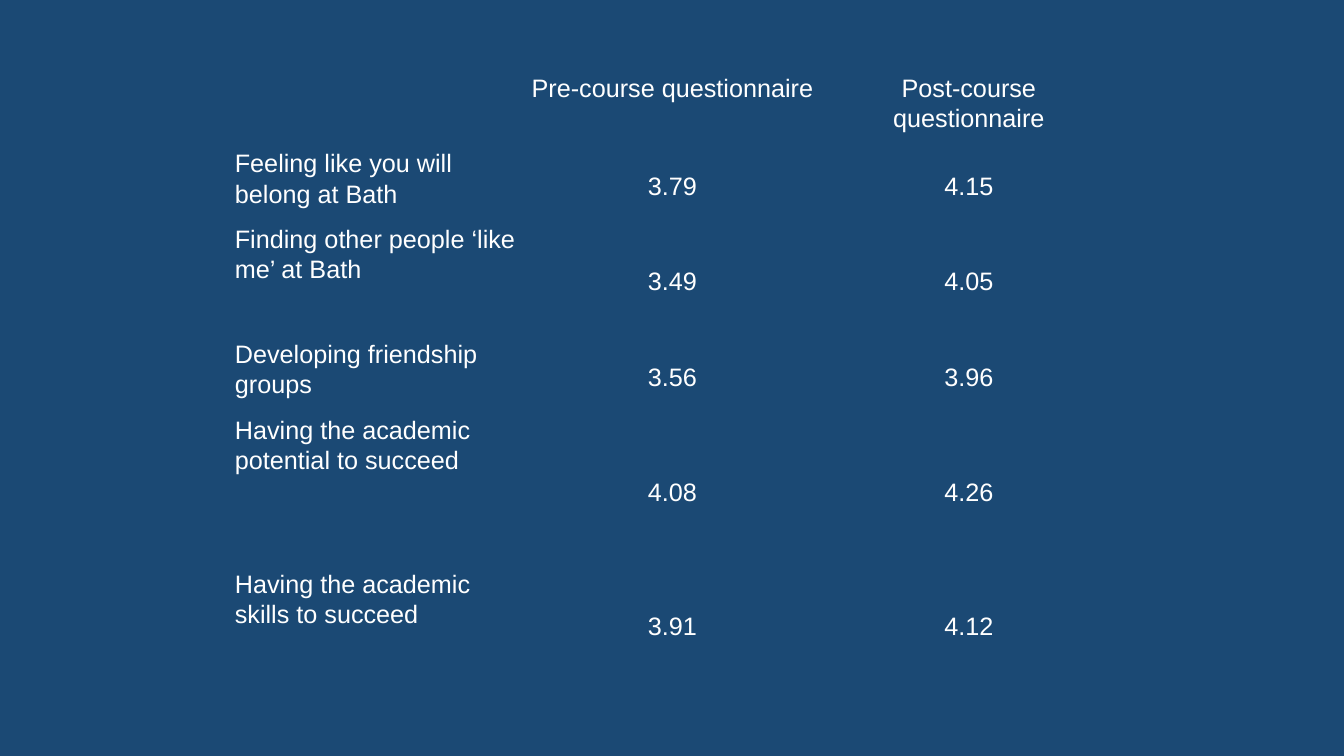
import dataclasses

import lxml.etree
import pptx
import pptx.dml.color
import pptx.enum.text
import pptx.oxml.ns
import pptx.table
import pptx.util

WIDE, HIGH = 13.33, 7.5
LEFT, TOP = 2.26, 0.72
COLUMN = 2.94
NAVY, WHITE = "1B4974", "FFFFFF"
ALIGN = pptx.enum.text.PP_ALIGN
ANCHOR = pptx.enum.text.MSO_ANCHOR
HEADS = ("", "Pre-course questionnaire", "Post-course questionnaire")
HEAD_HIGH = 0.75


@dataclasses.dataclass(frozen=True)
class Item:
    label: str
    pre: float
    post: float
    high: float


ITEMS = (
    Item("Feeling like you will belong at Bath", 3.79, 4.15, 0.75),
    Item("Finding other people ‘like me’ at Bath", 3.49, 4.05, 1.14),
    Item("Developing friendship groups", 3.56, 3.96, 0.75),
    Item("Having the academic potential to succeed", 4.08, 4.26, 1.53),
    Item("Having the academic skills to succeed", 3.91, 4.12, 1.14),
)


def tint(code: str) -> pptx.dml.color.RGBColor:
    return pptx.dml.color.RGBColor.from_string(code)


def clear(cell: pptx.table._Cell) -> None:
    """Take away the borders and fill of the table style."""
    props = cell._tc.get_or_add_tcPr()
    for side in ("lnL", "lnR", "lnT", "lnB"):
        line = lxml.etree.SubElement(props, pptx.oxml.ns.qn(f"a:{side}"))
        lxml.etree.SubElement(line, pptx.oxml.ns.qn("a:noFill"))
    cell.fill.background()


def write(cell: pptx.table._Cell, text: str, align: ALIGN, anchor: ANCHOR) -> None:
    cell.margin_left = cell.margin_right = pptx.util.Inches(0.07)
    cell.margin_top = cell.margin_bottom = 0
    cell.vertical_anchor = anchor
    cell.text = text
    para = cell.text_frame.paragraphs[0]
    para.alignment = align
    para.line_spacing = 1.07
    para.space_after = pptx.util.Pt(8)
    para.font.name = "Arial"
    para.font.size = pptx.util.Pt(18)
    para.font.color.rgb = tint(WHITE)


def main() -> None:
    deck = pptx.Presentation()
    deck.slide_width = pptx.util.Inches(WIDE)
    deck.slide_height = pptx.util.Inches(HIGH)
    slide = deck.slides.add_slide(deck.slide_layouts.get_by_name("Blank"))
    slide.background.fill.solid()
    slide.background.fill.fore_color.rgb = tint(NAVY)

    rows = [HEADS] + [(item.label, f"{item.pre:.2f}", f"{item.post:.2f}") for item in ITEMS]
    highs = [HEAD_HIGH] + [item.high for item in ITEMS]
    box = (LEFT, TOP, COLUMN * len(HEADS), sum(highs))
    table = slide.shapes.add_table(len(rows), len(HEADS), *map(pptx.util.Inches, box)).table
    table.first_row = table.horz_banding = False
    for column in table.columns:
        column.width = pptx.util.Inches(COLUMN)
    for r, (texts, high) in enumerate(zip(rows, highs)):
        table.rows[r].height = pptx.util.Inches(high)
        for c, text in enumerate(texts):
            cell = table.cell(r, c)
            clear(cell)
            align = ALIGN.CENTER if c else ALIGN.LEFT
            anchor = ANCHOR.MIDDLE if r and c else ANCHOR.TOP
            write(cell, text, align, anchor)

    deck.save("out.pptx")


if __name__ == "__main__":
    main()
